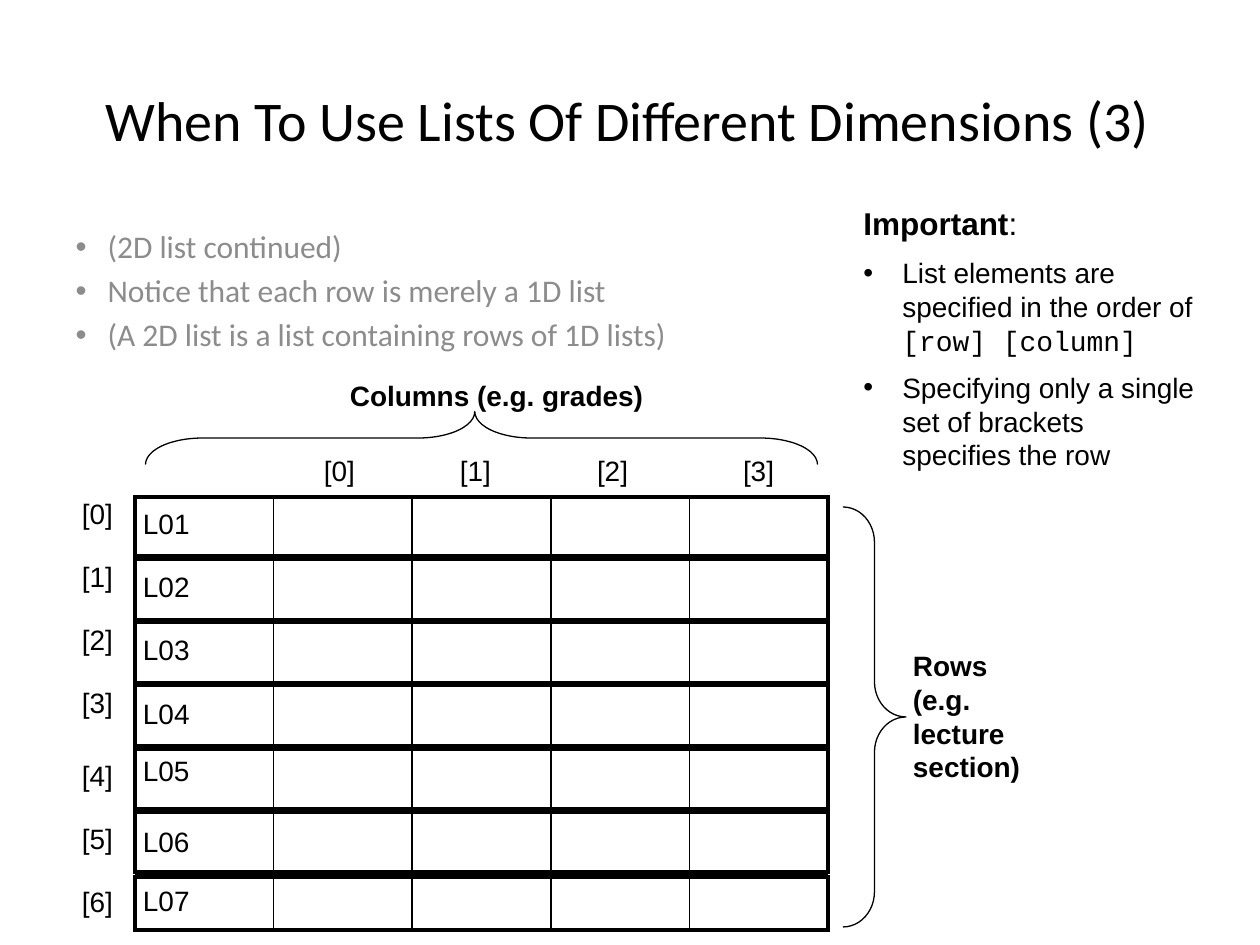
from dataclasses import dataclass

from lxml.etree import SubElement as Sub
from pptx import Presentation
from pptx.dml.color import RGBColor as Rgb
from pptx.enum.shapes import MSO_CONNECTOR as Conn, MSO_SHAPE as Shape
from pptx.enum.text import MSO_ANCHOR as Anchor, MSO_AUTO_SIZE as Auto
from pptx.oxml.ns import qn
from pptx.util import Emu, Pt

SCALE = 914400 / 126
INK = {"black": "000000", "gray": "8C8C8C"}
LEFT, WIDE, COLS = 135, 693, 5
PITCH = 63
THIN, EDGE, THICK = 1, 2.25, 4


@dataclass
class Box:
    x: int
    y: int
    w: int
    h: int

    def emu(self) -> list[Emu]:
        return [px(n) for n in (self.x, self.y, self.w, self.h)]


@dataclass
class Font:
    size: int = 16
    name: str = "Arial"
    bold: bool = False
    ink: str = "black"


@dataclass
class Brace:
    box: Box
    curve: float
    point: float
    turn: int = 0


@dataclass
class Row:
    name: str
    box: Box


BASE = Font()
BOLD = Font(bold=True)
TITLE = "When To Use Lists Of Different Dimensions (3)"
POINTS = [
    "(2D list continued)",
    "Notice that each row is merely a 1D list",
    "(A 2D list is a list containing rows of 1D lists)",
]
NOTES = [
    [("Important", Font(18, bold=True)), (":", Font(18))],
    [("List elements are specified in the order of ", BASE),
     ("[row] [column]", Font(name="Courier New"))],
    [("Specifying only a single set of brackets specifies the row", BASE)],
]
GRIDS = [
    Row("L01", Box(LEFT, 497, WIDE, 59)),
    Row("L02", Box(LEFT, 559, WIDE, 61)),
    Row("L03", Box(LEFT, 622, WIDE, 61)),
    Row("L04", Box(LEFT, 685, WIDE, 63)),
    Row("L07", Box(LEFT, 877, WIDE, 53)),
]
RULED = [
    Row("L05", Box(LEFT, 748, 136, 48)),
    Row("L06", Box(LEFT, 822, 139, 42)),
]
RULE_TOP = 748
BRACES = [
    Brace(Box(455, 102, 53, 672), 1.07, 0.49, 270),
    Brace(Box(843, 507, 63, 420), 0.56, 0.5),
]


def px(n: float) -> Emu:
    return Emu(round(n * SCALE))


def add_run(para, text: str, font: Font) -> None:
    run = para.add_run()
    run.text = text
    run.font.size = Pt(font.size)
    run.font.name = font.name
    run.font.bold = font.bold
    run.font.color.rgb = Rgb.from_string(INK[font.ink])


def next_para(frame, first: bool):
    return frame.paragraphs[0] if first else frame.add_paragraph()


def hang(para, dent: int) -> None:
    """Set a hanging indent with a round bullet."""
    props = para._p.get_or_add_pPr()
    props.set("marL", str(px(dent)))
    props.set("indent", str(-px(dent)))
    Sub(props, qn("a:buFont"), typeface="Arial")
    Sub(props, qn("a:buChar"), char="•")


def place(holder, box: Box):
    """Move a placeholder and return its text frame."""
    holder.left, holder.top, holder.width, holder.height = box.emu()
    holder.text_frame.auto_size = Auto.NONE
    return holder.text_frame


def add_label(slide, box: Box, text: str, font: Font = BASE):
    frame = slide.shapes.add_textbox(*box.emu()).text_frame
    frame.word_wrap = True
    frame.margin_left = frame.margin_right = 0
    frame.margin_top = frame.margin_bottom = 0
    add_run(frame.paragraphs[0], text, font)
    return frame


def add_line(slide, x: float, y: float, x2: float, y2: float,
             width: float) -> None:
    line = slide.shapes.add_connector(Conn.STRAIGHT, px(x), px(y), px(x2), px(y2))
    line.line.color.rgb = Rgb.from_string(INK["black"])
    line.line.width = Pt(width)
    Sub(line._element.spPr, qn("a:effectLst"))


def add_brace(slide, brace: Brace) -> None:
    shape = slide.shapes.add_shape(Shape.RIGHT_BRACE, *brace.box.emu())
    shape.adjustments[0] = brace.curve
    shape.adjustments[1] = brace.point
    shape.rotation = brace.turn
    shape.shadow.inherit = False
    shape.fill.background()
    shape.line.color.rgb = Rgb.from_string(INK["black"])
    shape.line.width = Pt(0.75)


def set_edge(cell, side: str, width: float) -> None:
    line = Sub(cell._tc.get_or_add_tcPr(), qn(f"a:ln{side}"), w=str(Pt(width)))
    fill = Sub(line, qn("a:solidFill"))
    Sub(fill, qn("a:srgbClr"), val=INK["black"])


def add_grid(slide, row: Row) -> None:
    table = slide.shapes.add_table(1, COLS, *row.box.emu()).table
    table.first_row = table.horz_banding = False
    for i, cell in enumerate(table.iter_cells()):
        set_edge(cell, "L", EDGE if i == 0 else THIN)
        set_edge(cell, "R", EDGE if i == COLS - 1 else THIN)
        set_edge(cell, "T", EDGE)
        set_edge(cell, "B", EDGE)
        cell.fill.background()
    cell = table.cell(0, 0)
    cell.margin_left = px(8)
    cell.margin_right = cell.margin_top = cell.margin_bottom = 0
    cell.vertical_anchor = Anchor.MIDDLE
    para = cell.text_frame.paragraphs[0]
    para.line_spacing = 0.9
    add_run(para, row.name, BASE)


def add_rules(slide) -> None:
    """Draw the rows that are made of single lines."""
    for row in RULED:
        frame = add_label(slide, row.box, row.name)
        frame.margin_left = px(8)
        frame.vertical_anchor = Anchor.MIDDLE
        frame.paragraphs[0].line_spacing = 0.9
    for r in range(len(RULED) + 1):
        y = RULE_TOP + r * PITCH
        add_line(slide, LEFT, y, LEFT + WIDE, y, THICK)
        if r == len(RULED):
            continue
        for c in range(COLS + 1):
            x = LEFT + c * WIDE / COLS
            add_line(slide, x, y, x, y + PITCH, EDGE if c in (0, COLS) else THIN)


def add_notes(slide) -> None:
    frame = slide.shapes.add_textbox(*Box(851, 198, 357, 289).emu()).text_frame
    frame.word_wrap = True
    for i, runs in enumerate(NOTES):
        para = next_para(frame, i == 0)
        para.space_before = Pt(8)
        if i:
            hang(para, 39)
        for text, font in runs:
            add_run(para, text, font)


def main() -> None:
    deck = Presentation()
    deck.slide_width, deck.slide_height = px(1260), px(945)
    slide = deck.slides.add_slide(deck.slide_layouts[1])
    frame = place(slide.shapes.title, Box(61, 40, 1134, 158))
    add_run(frame.paragraphs[0], TITLE, Font(32, "Calibri"))
    frame = place(slide.placeholders[1], Box(63, 221, 760, 145))
    for i, text in enumerate(POINTS):
        para = next_para(frame, i == 0)
        hang(para, 32)
        add_run(para, text, Font(18, "Calibri", ink="gray"))
    for row in GRIDS:
        add_grid(slide, row)
    for i, x in enumerate((324, 460, 597, 743)):
        add_label(slide, Box(x, 454, 42, 34), f"[{i}]")
    for i in range(len(GRIDS) + len(RULED)):
        y = 497 + i * PITCH + (10 if i > 3 else 0)
        add_label(slide, Box(82, y, 42, 34), f"[{i}]")
    for brace in BRACES:
        add_brace(slide, brace)
    add_label(slide, Box(350, 379, 315, 34), "Columns (e.g. grades)", BOLD)
    add_label(slide, Box(913, 649, 136, 136), "Rows (e.g. lecture section)", BOLD)
    add_rules(slide)
    add_notes(slide)
    deck.save("out.pptx")


if __name__ == "__main__":
    main()
